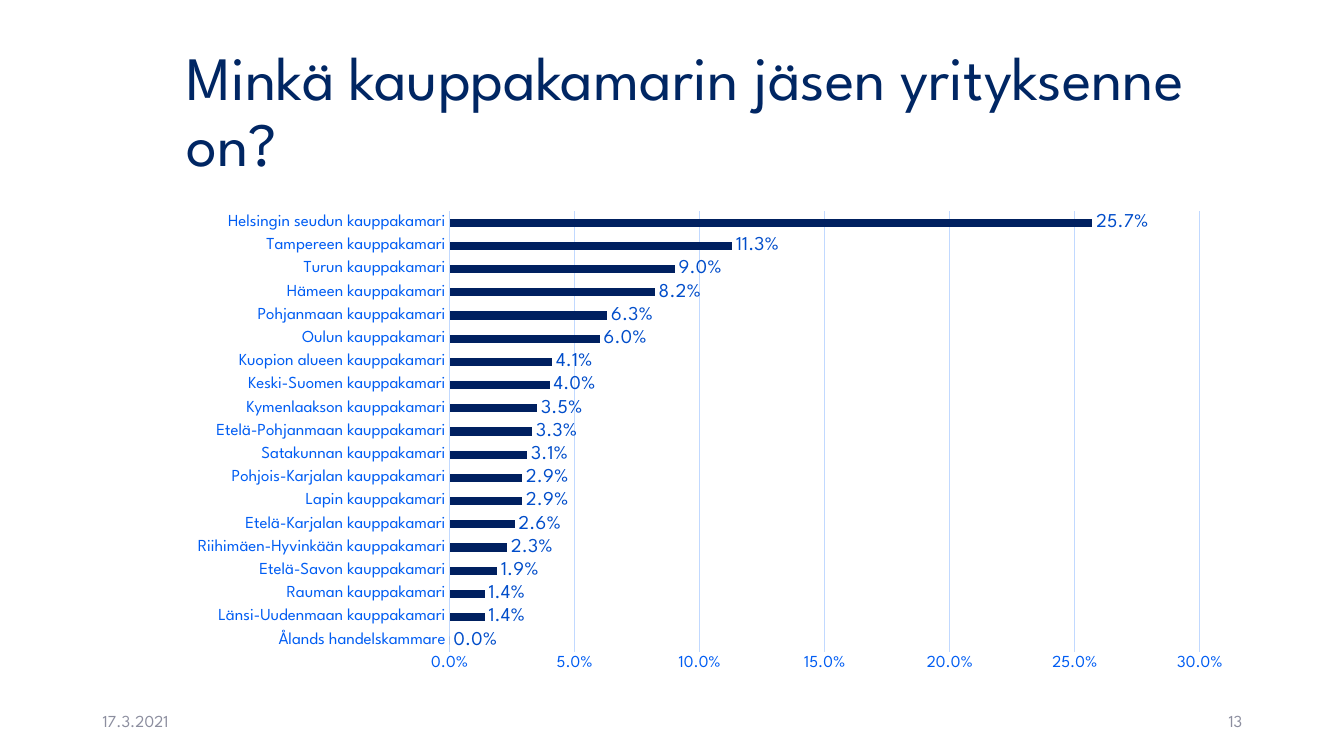
from dataclasses import dataclass

import pptx
import pptx.chart.data
import pptx.dml.color
import pptx.enum.chart
import pptx.enum.text
import pptx.util

Inches = pptx.util.Inches
Align = pptx.enum.text.PP_ALIGN

FONT = "League Spartan"
COLORS = {
    "title": "002663",
    "footer": "8C8E9F",
    "bar": "002060",
    "axis": "005DF3",
    "label": "004DCA",
    "grid": "C1D9FF",
}
PERCENT_FORMAT = "0.0%"


@dataclass(frozen=True)
class TextItem:
    text: str
    left: float
    top: float
    width: float
    height: float
    size: int
    color: str
    align: Align = Align.LEFT
    line_spacing: float = 1.0


TEXT_ITEMS = [
    TextItem("Minkä kauppakamarin jäsen yrityksenne on?",
             1.75, 0.4, 10.59, 1.45, 44, "title", line_spacing=0.9),
    TextItem("17.3.2021", 0.92, 6.95, 3, 0.4, 12, "footer"),
    TextItem("13", 9.42, 6.95, 3, 0.4, 12, "footer", Align.RIGHT),
]

# Share of members by chamber, from the bottom bar to the top
MEMBER_SHARES = {
    "Ålands handelskammare": 0,
    "Länsi-Uudenmaan kauppakamari": 0.014,
    "Rauman kauppakamari": 0.014,
    "Etelä-Savon kauppakamari": 0.019,
    "Riihimäen-Hyvinkään kauppakamari": 0.023,
    "Etelä-Karjalan kauppakamari": 0.026,
    "Lapin kauppakamari": 0.029,
    "Pohjois-Karjalan kauppakamari": 0.029,
    "Satakunnan kauppakamari": 0.031,
    "Etelä-Pohjanmaan kauppakamari": 0.033,
    "Kymenlaakson kauppakamari": 0.035,
    "Keski-Suomen kauppakamari": 0.04,
    "Kuopion alueen kauppakamari": 0.041,
    "Oulun kauppakamari": 0.06,
    "Pohjanmaan kauppakamari": 0.063,
    "Hämeen kauppakamari": 0.082,
    "Turun kauppakamari": 0.09,
    "Tampereen kauppakamari": 0.113,
    "Helsingin seudun kauppakamari": 0.257,
}


def set_attributes(target: object, values: dict) -> None:
    for name, value in values.items():
        setattr(target, name, value)


def rgb(color: str) -> pptx.dml.color.RGBColor:
    return pptx.dml.color.RGBColor.from_string(COLORS[color])


def style_font(font: pptx.text.text.Font, size: int, color: str) -> None:
    set_attributes(font, {"name": FONT, "size": pptx.util.Pt(size), "bold": False})
    font.color.rgb = rgb(color)


def style_line(line: pptx.dml.line.LineFormat) -> None:
    line.color.rgb = rgb("grid")
    line.width = pptx.util.Pt(0.75)


def add_text(slide: pptx.slide.Slide, item: TextItem) -> None:
    shape = slide.shapes.add_textbox(
        Inches(item.left), Inches(item.top), Inches(item.width), Inches(item.height))
    set_attributes(shape.text_frame, {
        "word_wrap": True,
        "vertical_anchor": pptx.enum.text.MSO_ANCHOR.MIDDLE,
    })
    paragraph = shape.text_frame.paragraphs[0]
    set_attributes(paragraph, {"alignment": item.align, "line_spacing": item.line_spacing})
    run = paragraph.add_run()
    run.text = item.text
    style_font(run.font, item.size, item.color)


def add_share_chart(slide: pptx.slide.Slide) -> None:
    data = pptx.chart.data.CategoryChartData(number_format=PERCENT_FORMAT)
    data.categories = list(MEMBER_SHARES)
    data.add_series("Series 1", list(MEMBER_SHARES.values()))
    chart = slide.shapes.add_chart(
        pptx.enum.chart.XL_CHART_TYPE.BAR_CLUSTERED,
        Inches(1.75), Inches(2), Inches(10.59), Inches(4.76), data).chart
    set_attributes(chart, {"has_legend": False, "has_title": False})
    style_font(chart.font, 10, "title")

    # Axes and gridlines
    no_tick = pptx.enum.chart.XL_TICK_MARK.NONE
    for axis in (chart.category_axis, chart.value_axis):
        set_attributes(axis, {"major_tick_mark": no_tick, "minor_tick_mark": no_tick})
        style_font(axis.tick_labels.font, 12, "axis")
    style_line(chart.category_axis.format.line)
    value_axis = chart.value_axis
    set_attributes(value_axis, {
        "minimum_scale": 0, "maximum_scale": 0.3, "major_unit": 0.05,
        "has_major_gridlines": True,
    })
    value_axis.format.line.fill.background()
    style_line(value_axis.major_gridlines.format.line)

    # Bars and their labels
    plot = chart.plots[0]
    set_attributes(plot, {"gap_width": 182, "vary_by_categories": False,
                          "has_data_labels": True})
    fill = plot.series[0].format.fill
    fill.solid()
    fill.fore_color.rgb = rgb("bar")
    set_attributes(plot.data_labels, {
        "show_value": True,
        "position": pptx.enum.chart.XL_LABEL_POSITION.OUTSIDE_END,
    })
    style_font(plot.data_labels.font, 14, "label")
    for labels in (value_axis.tick_labels, plot.data_labels):
        set_attributes(labels, {"number_format": PERCENT_FORMAT,
                                "number_format_is_linked": False})


def main() -> None:
    presentation = pptx.Presentation()
    set_attributes(presentation, {"slide_width": Inches(13.33), "slide_height": Inches(7.5)})
    slide = presentation.slides.add_slide(presentation.slide_layouts[6])
    for item in TEXT_ITEMS:
        add_text(slide, item)
    add_share_chart(slide)
    presentation.save("out.pptx")


if __name__ == "__main__":
    main()
